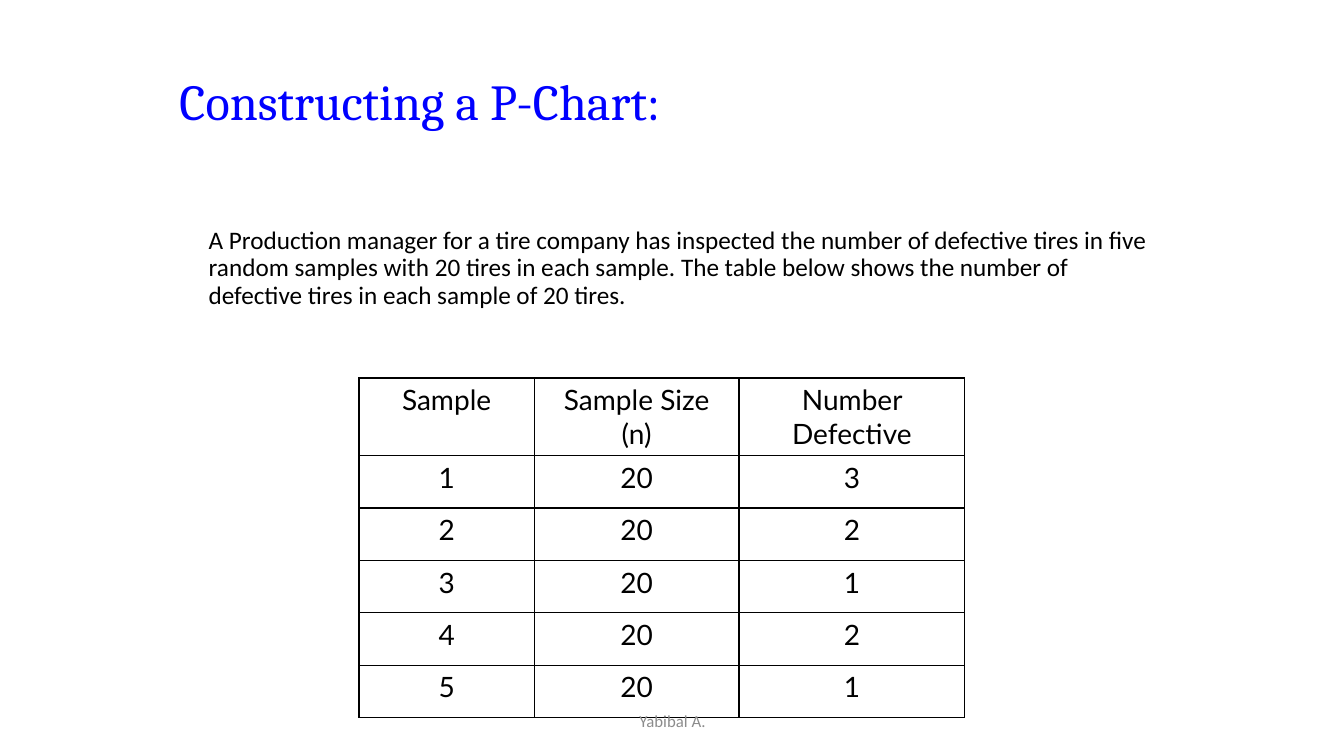
from lxml.etree import SubElement
from pptx import Presentation
from pptx.dml.color import RGBColor
from pptx.enum.text import MSO_ANCHOR, MSO_AUTO_SIZE, PP_ALIGN
from pptx.oxml.ns import qn
from pptx.util import Emu, Pt

EMU_PER_PX = 9144
BLACK, BLUE, GREY = "000000", "0000FF", "8C8C8C"

SAMPLE_SIZE = 20
DEFECTIVE_COUNTS = [3, 2, 1, 2, 1]
HEADINGS = ["Sample", "Sample Size (n)", "Number Defective"]
COLUMN_WIDTHS = [174, 203, 224]
HEADING_HEIGHT, ROW_HEIGHT = 77, 52


def px(length):
    return Emu(length * EMU_PER_PX)


def color(hex_string):
    return RGBColor.from_string(hex_string)


def write(frame, text, font_name, size, hex_color, align=PP_ALIGN.LEFT):
    frame.text = text
    paragraph = frame.paragraphs[0]
    paragraph.alignment = align
    paragraph.font.name = font_name
    paragraph.font.size = Pt(size)
    paragraph.font.color.rgb = color(hex_color)
    return paragraph


def place(shape, left, top, width, height, anchor):
    shape.left, shape.top = px(left), px(top)
    shape.width, shape.height = px(width), px(height)
    frame = shape.text_frame
    frame.word_wrap = True
    frame.auto_size = MSO_AUTO_SIZE.NONE
    frame.vertical_anchor = anchor
    return frame


def add_title(slide, text):
    frame = place(slide.shapes.title, 168, 23, 1136, 160, MSO_ANCHOR.MIDDLE)
    write(frame, text, "Cambria", 36, BLUE).line_spacing = 0.9


def add_introduction(slide, text):
    frame = place(slide.placeholders[1], 172, 221, 983, 146, MSO_ANCHOR.TOP)
    paragraph = write(frame, text, "Calibri", 18, BLACK)
    paragraph.line_spacing = 0.9
    paragraph.space_before = Pt(10)
    properties = paragraph._p.get_or_add_pPr()
    properties.set("marL", str(px(25)))
    properties.set("indent", "0")
    SubElement(properties, qn("a:buNone"))


def draw_borders(cell):
    properties = cell._tc.get_or_add_tcPr()
    for side in ("lnL", "lnR", "lnT", "lnB"):
        line = SubElement(properties, qn(f"a:{side}"), w=str(Pt(1)))
        fill = SubElement(line, qn("a:solidFill"))
        SubElement(fill, qn("a:srgbClr"), val=BLACK)


def add_defects_table(slide):
    samples = enumerate(DEFECTIVE_COUNTS, start=1)
    rows = [HEADINGS] + [[number, SAMPLE_SIZE, count] for number, count in samples]
    heights = [HEADING_HEIGHT] + [ROW_HEIGHT] * len(DEFECTIVE_COUNTS)
    table = slide.shapes.add_table(
        len(rows), len(HEADINGS), px(356), px(375),
        px(sum(COLUMN_WIDTHS)), px(sum(heights))).table
    table.first_row = table.horz_banding = False
    for column, width in zip(table.columns, COLUMN_WIDTHS):
        column.width = px(width)
    for row, height, values in zip(table.rows, heights, rows):
        row.height = px(height)
        for cell, value in zip(row.cells, values):
            write(cell.text_frame, str(value), "Lato", 20, BLACK, PP_ALIGN.CENTER)
            cell.margin_left = cell.margin_right = px(13)
            cell.margin_top = cell.margin_bottom = px(5)
            draw_borders(cell)
            cell.fill.background()


def add_footer(slide, text):
    box = (442, 695, 450, 40)
    footer = slide.shapes.add_textbox(*map(px, box))
    frame = place(footer, *box, MSO_ANCHOR.MIDDLE)
    write(frame, text, "Calibri", 12, GREY, PP_ALIGN.CENTER)


def main():
    presentation = Presentation()
    presentation.slide_width, presentation.slide_height = px(1333), px(750)
    slide = presentation.slides.add_slide(presentation.slide_layouts[1])
    add_title(slide, "Constructing a P-Chart:")
    add_introduction(
        slide,
        "A Production manager for a tire company has inspected the number of "
        "defective tires in five random samples with 20 tires in each sample. "
        "The table below shows the number of defective tires in each sample "
        "of 20 tires.")
    add_defects_table(slide)
    add_footer(slide, "Yabibal A.")
    presentation.save("out.pptx")


if __name__ == "__main__":
    main()
